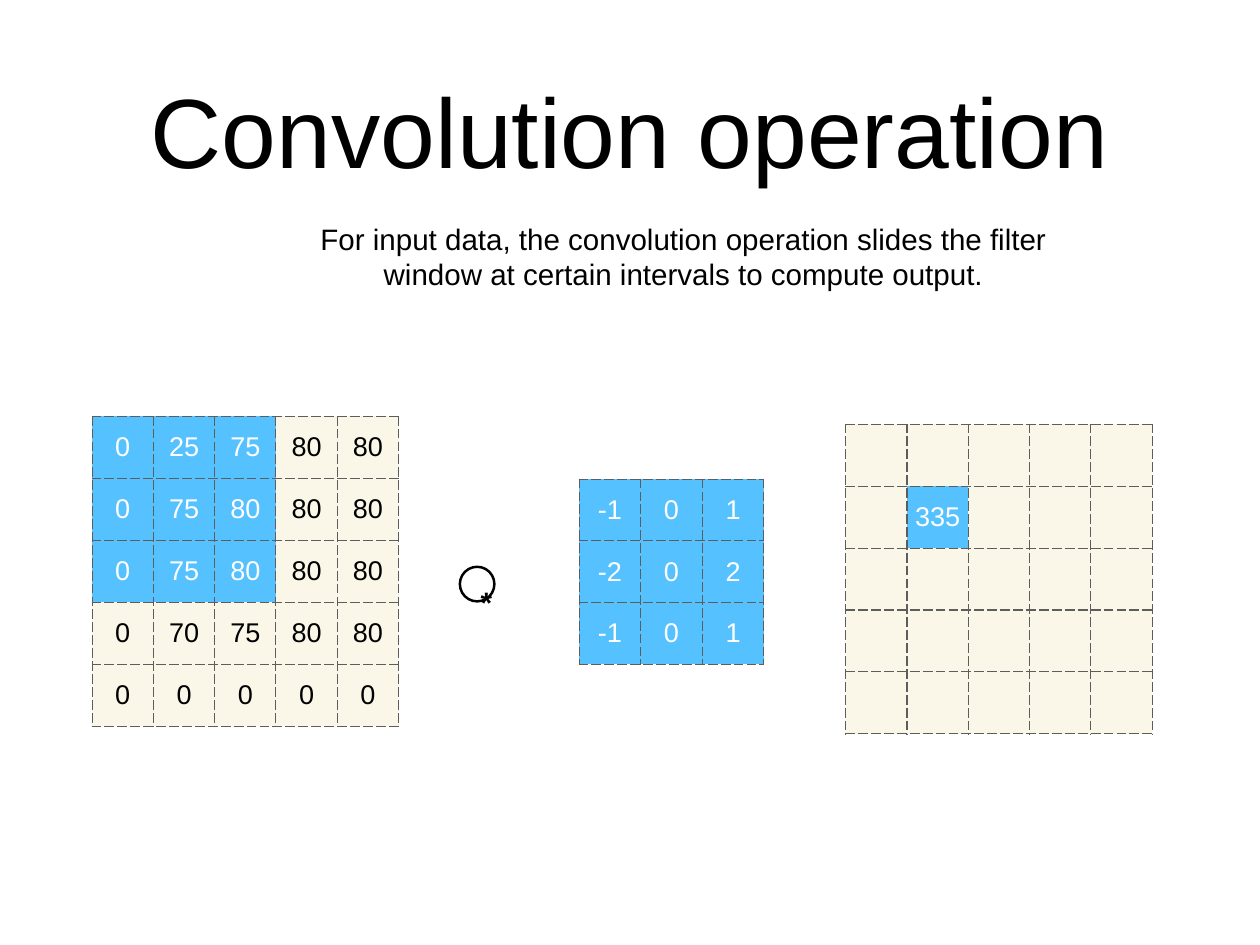
from lxml.etree import SubElement
from pptx import Presentation
from pptx.dml.color import RGBColor
from pptx.enum.shapes import MSO_SHAPE
from pptx.enum.text import MSO_ANCHOR, PP_ALIGN
from pptx.oxml.ns import qn
from pptx.util import Inches, Pt

COLORS = {"ink": "000000", "active": "56C1FF", "idle": "FAF7E9",
          "on_active": "FFFFFF", "border": "5D5D5D"}
FONT = "Arial"
INSET = Inches(0.06)

prs = Presentation()
prs.slide_width, prs.slide_height = Inches(14.22), Inches(10.67)
COL, ROW = prs.slide_width / 100, prs.slide_height / 100

INPUT = [[0, 25, 75, 80, 80],
         [0, 75, 80, 80, 80],
         [0, 75, 80, 80, 80],
         [0, 70, 75, 80, 80],
         [0, 0, 0, 0, 0]]
FILTER = [[-1, 0, 1], [-2, 0, 2], [-1, 0, 1]]
OUTPUT = [[335 if (i, j) == (1, 1) else "" for j in range(5)] for i in range(5)]
WINDOW = {(i, j) for i in range(3) for j in range(3)}


def place(x, y, w, h):
    """Turn a box on the 100 by 100 slide grid into slide lengths."""
    return round(x * COL), round(y * ROW), round(w * COL), round(h * ROW)


def color(name):
    return RGBColor.from_string(COLORS[name])


def write(tf, text, size, ink="ink", bold=False):
    p = tf.paragraphs[0]
    p.alignment = PP_ALIGN.CENTER
    r = p.add_run()
    r.text = text
    r.font.name, r.font.size, r.font.bold = FONT, Pt(size), bold
    r.font.color.rgb = color(ink)


def set_insets(obj, inset=INSET):
    obj.margin_left = obj.margin_right = inset
    obj.margin_top = obj.margin_bottom = inset
    obj.vertical_anchor = MSO_ANCHOR.MIDDLE


def add_text(slide, box, text, size, bold=False, wrap=True, inset=INSET):
    tf = slide.shapes.add_textbox(*place(*box)).text_frame
    tf.word_wrap = wrap
    set_insets(tf, inset)
    write(tf, text, size, bold=bold)


def dash_borders(cell):
    tcPr = cell._tc.get_or_add_tcPr()
    for i, side in enumerate(("lnL", "lnR", "lnT", "lnB")):
        ln = tcPr.makeelement(qn(f"a:{side}"), {"w": str(Pt(1))})
        fill = SubElement(ln, qn("a:solidFill"))
        SubElement(fill, qn("a:srgbClr"), val=COLORS["border"])
        SubElement(ln, qn("a:prstDash"), val="lgDash")
        tcPr.insert(i, ln)


def add_matrix(slide, box, values, active):
    """Draw values as equal cells, with the active positions highlighted."""
    rows, cols = len(values), len(values[0])
    x, y, w, h = place(*box)
    table = slide.shapes.add_table(rows, cols, x, y, w, h).table
    table.first_row = table.horz_banding = False
    for column in table.columns:
        column.width = w // cols
    for row in table.rows:
        row.height = h // rows
    for i, row in enumerate(values):
        for j, value in enumerate(row):
            cell = table.cell(i, j)
            is_active = (i, j) in active
            set_insets(cell)
            cell.fill.solid()
            cell.fill.fore_color.rgb = color("active" if is_active else "idle")
            if value != "":
                write(cell.text_frame, str(value), 22,
                      "on_active" if is_active else "ink")
            dash_borders(cell)


def add_operator(slide, box):
    x, y, w, h = box
    sp = slide.shapes.add_shape(MSO_SHAPE.OVAL, *place(*box))
    sp.shadow.inherit = False
    sp.fill.background()
    sp.line.color.rgb = color("ink")
    sp.line.width = Pt(2)
    add_text(slide, (x + 0.27 * w, y + 0.52 * h, w, h), "*", 24,
             bold=True, wrap=False, inset=0)


def add_convolution_slide():
    slide = prs.slides.add_slide(prs.slide_layouts[6])
    add_matrix(slide, (7.31, 44.05, 24.33, 32.8), INPUT, WINDOW)
    add_matrix(slide, (45.96, 50.7, 14.67, 19.59), FILTER, WINDOW)
    add_matrix(slide, (67.12, 44.88, 24.33, 32.8), OUTPUT, {(1, 1)})
    add_operator(slide, (36.5, 59.98, 2.74, 3.66))
    add_text(slide, (7.31, 2.62, 85.37, 22.12), "Convolution operation", 80)
    add_text(slide, (21.03, 22.87, 66.39, 8.53),
             "For input data, the convolution operation slides the filter "
             "window at certain intervals to compute output.", 24)


if __name__ == "__main__":
    add_convolution_slide()
    prs.save("out.pptx")
